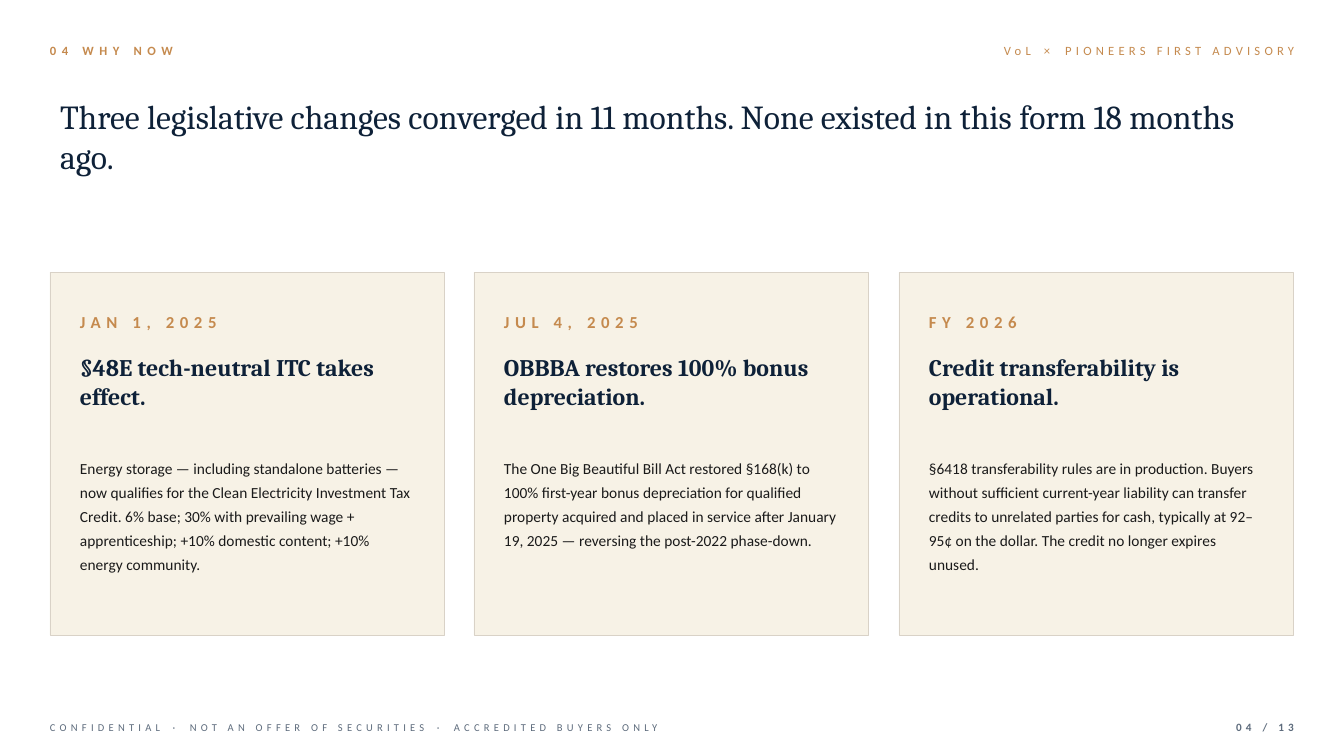
"""Build the "Why now" slide: a headline above three dated legislation cards."""
import pptx
import pptx.dml.color
import pptx.enum.shapes
import pptx.enum.text
import pptx.util

PX = 914400 / 100.8
GOLD, NAVY, INK, SLATE = "C58A4E", "0E2138", "1A1A1A", "5D6B7C"
CREAM, RULE = "F7F2E6", "D9D2C7"
MIDDLE = pptx.enum.text.MSO_ANCHOR.MIDDLE
TOP = pptx.enum.text.MSO_ANCHOR.TOP
LEFT = pptx.enum.text.PP_ALIGN.LEFT
RIGHT = pptx.enum.text.PP_ALIGN.RIGHT


def rgb(value):
    return pptx.dml.color.RGBColor.from_string(value)


def put_text(sp, box, text, size, color, font="Calibri", bold=False,
             track=0, anchor=MIDDLE, align=LEFT, leading=None):
    """Place and format one paragraph; | marks off more widely tracked separators."""
    sp.left, sp.top, sp.width, sp.height = [round(v * PX) for v in box]
    tf = sp.text_frame
    tf.word_wrap = True
    tf.auto_size = pptx.enum.text.MSO_AUTO_SIZE.NONE
    tf.vertical_anchor = anchor
    tf.margin_left = tf.margin_top = tf.margin_right = tf.margin_bottom = 0
    p = tf.paragraphs[0]
    p.alignment = align
    if leading:
        p.line_spacing = leading
    p.font.name, p.font.size, p.font.bold = font, pptx.util.Pt(size), bold
    p.font.color.rgb = rgb(color)
    for i, piece in enumerate(text.split("|")):
        r = p.add_run()
        r.text = piece
        if track:
            r.font._element.set("spc", str(track + i % 2 * 130))


prs = pptx.Presentation()
prs.slide_width, prs.slide_height = round(1344 * PX), round(756 * PX)
s = prs.slides.add_slide(prs.slide_layouts[5])

put_text(s.shapes.title, (60, 96, 1223, 121),
         "Three legislative changes converged in 11 months. "
         "None existed in this form 18 months ago.",
         24, NAVY, font="Cambria", anchor=TOP)

labels = [
    ((50, 35, 756, 30), "04 WHY NOW", 9, GOLD, True, 400, LEFT),
    ((756, 35, 538, 30), "VoL| × |PIONEERS FIRST ADVISORY", 9, GOLD, False, 300, RIGHT),
    ((50, 716, 958, 22),
     "CONFIDENTIAL| · |NOT AN OFFER OF SECURITIES| · |ACCREDITED BUYERS ONLY",
     7.5, SLATE, False, 300, LEFT),
    ((1203, 716, 91, 22), "04 / 13", 8, SLATE, True, 300, RIGHT),
]
for box, text, size, color, bold, track, align in labels:
    put_text(s.shapes.add_textbox(0, 0, 0, 0), box, text, size, color,
             bold=bold, track=track, align=align)

cards = [
    ("JAN 1, 2025", "§48E tech-neutral ITC takes effect.",
     "Energy storage — including standalone batteries — now qualifies for the "
     "Clean Electricity Investment Tax Credit. 6% base; 30% with prevailing wage + "
     "apprenticeship; +10% domestic content; +10% energy community."),
    ("JUL 4, 2025", "OBBBA restores 100% bonus depreciation.",
     "The One Big Beautiful Bill Act restored §168(k) to 100% first-year bonus "
     "depreciation for qualified property acquired and placed in service after "
     "January 19, 2025 — reversing the post-2022 phase-down."),
    ("FY 2026", "Credit transferability is operational.",
     "§6418 transferability rules are in production. Buyers without sufficient "
     "current-year liability can transfer credits to unrelated parties for cash, "
     "typically at 92–95¢ on the dollar. The credit no longer expires unused."),
]
for i, (date, heading, detail) in enumerate(cards):
    left = 50 + i * 849 // 2
    card = s.shapes.add_shape(pptx.enum.shapes.MSO_SHAPE.RECTANGLE,
                              *[round(v * PX) for v in (left, 272, 394, 363)])
    card.shadow.inherit = False
    card.fill.solid()
    card.fill.fore_color.rgb = rgb(CREAM)
    card.line.color.rgb = rgb(RULE)
    card.line.width = pptx.util.Pt(0.5)
    x = left + 30
    put_text(s.shapes.add_textbox(0, 0, 0, 0), (x, 302, 334, 40), date,
             12, GOLD, bold=True, track=400)
    put_text(s.shapes.add_textbox(0, 0, 0, 0), (x, 353, 334, 96), heading,
             17, NAVY, font="Cambria", bold=True, anchor=TOP)
    put_text(s.shapes.add_textbox(0, 0, 0, 0), (x, 454, 334, 161), detail,
             11, INK, anchor=TOP, leading=1.3)

prs.save("out.pptx")
